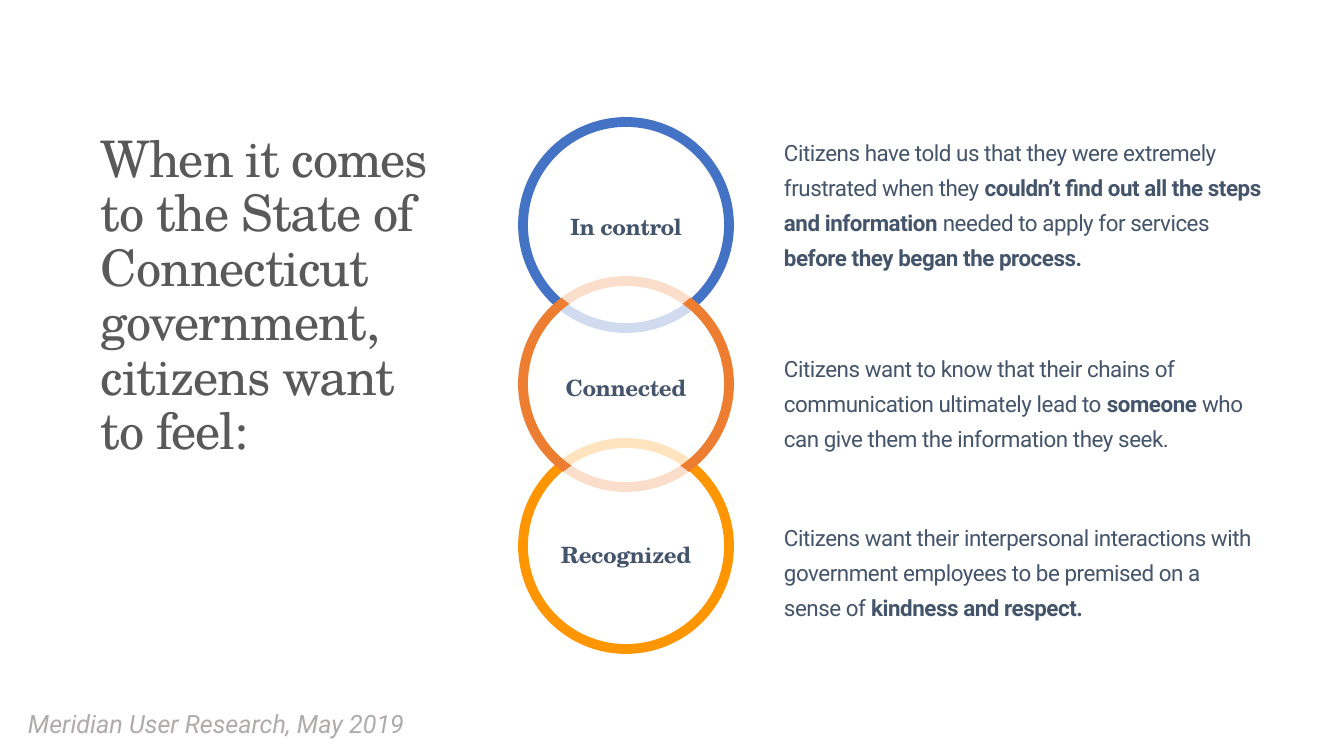
from lxml.etree import SubElement
from pptx import Presentation
from pptx.dml.color import RGBColor
from pptx.enum.shapes import MSO_SHAPE
from pptx.enum.text import MSO_ANCHOR, PP_ALIGN
from pptx.oxml.ns import qn
from pptx.util import Emu, Pt

EMU_PER_PIXEL = 914400 / 100.8
COLORS = {
    "white": "FFFFFF", "blue": "4472C4", "orange": "ED7D31", "amber": "FF9600",
    "slate": "44546A", "title": "595959", "source": "AFABAB",
}


def px(length):
    return Emu(round(length * EMU_PER_PIXEL))


def rgb(name):
    return RGBColor.from_string(COLORS[name])


def write(frame, text, *, size=16, font="Roboto", color="slate", bold=False,
          italic=False, tracking=0, align=PP_ALIGN.LEFT, leading=1.0, before=0):
    """Fill a frame's paragraph; **marks** switch bold, newlines break lines."""
    paragraph = frame.paragraphs[0]
    paragraph.alignment = align
    paragraph.line_spacing = leading
    paragraph.space_before = Pt(before)
    for part, phrase in enumerate(text.split("**")):
        for row, words in enumerate(phrase.split("\n")):
            if row:
                paragraph.add_line_break()
            if not words:
                continue
            run = paragraph.add_run()
            run.text = words
            run.font.size = Pt(size)
            run.font.name = font
            run.font.color.rgb = rgb(color)
            run.font.bold = bold or part % 2 == 1
            run.font.italic = italic
            if tracking:
                run.font._element.set("spc", str(round(tracking * 100)))


class SlideBuilder:
    serif = "TeX Gyre Schola"
    ring_width = 7
    veil_opacity = 75

    def __init__(self, slide):
        self.slide = slide

    def circle(self, left, top, size):
        shape = self.slide.shapes.add_shape(
            MSO_SHAPE.OVAL, px(left), px(top), px(size), px(size))
        shape.shadow.inherit = False
        return shape

    def ring(self, left, top, size, color):
        shape = self.circle(left, top, size)
        shape.fill.background()
        shape.line.color.rgb = rgb(color)
        shape.line.width = Pt(self.ring_width)

    def veil(self, left, top, size):
        """A translucent white disc that fades the rings beneath it."""
        shape = self.circle(left, top, size)
        shape.line.fill.background()
        shape.fill.solid()
        shape.fill.fore_color.rgb = rgb("white")
        tint = shape._element.spPr.find(qn("a:solidFill"))[0]
        SubElement(tint, qn("a:alpha"), val=str(self.veil_opacity * 1000))

    def text(self, left, top, width, height, words, insets=(0, 0), **style):
        box = self.slide.shapes.add_textbox(px(left), px(top), px(width), px(height))
        frame = box.text_frame
        frame.word_wrap = True
        frame.vertical_anchor = MSO_ANCHOR.TOP
        frame.margin_left = frame.margin_right = px(insets[0])
        frame.margin_top = frame.margin_bottom = px(insets[1])
        write(frame, words, **style)

    def label(self, center, top, width, words):
        self.text(center - width / 2, top, width, 46, words, font=self.serif,
                  bold=True, tracking=-0.3, align=PP_ALIGN.CENTER)

    def finding(self, top, width, words):
        self.text(784, top, width, 72, words, tracking=-0.3, leading=1.3, before=5)


presentation = Presentation()
presentation.slide_width = px(1344)
presentation.slide_height = px(756)
page = SlideBuilder(presentation.slides.add_slide(presentation.slide_layouts[6]))

# Headline
page.text(101, 129, 370, 220,
          "When it comes to the State of Connecticut government,\n"
          "citizens want \nto feel:",
          insets=(0, 5), size=36, font=page.serif, color="title",
          tracking=-0.8, leading=0.9)

# Interlocking rings: each veil fades the neighbours that cross it
RING_LEFT, RING_SIZE, VEIL_INSET = 523, 206, 6
VEIL_SIZE = RING_SIZE - 2 * VEIL_INSET
CENTER = RING_LEFT + RING_SIZE / 2
CONTROL_TOP, CONNECTED_TOP, RECOGNIZED_TOP = 122, 281, 443

page.ring(RING_LEFT, CONTROL_TOP, RING_SIZE, "blue")
page.ring(RING_LEFT, RECOGNIZED_TOP, RING_SIZE, "amber")
page.veil(RING_LEFT, CONNECTED_TOP, RING_SIZE)
page.ring(RING_LEFT, CONNECTED_TOP, RING_SIZE, "orange")
for outer_top in (CONTROL_TOP, RECOGNIZED_TOP):
    page.veil(RING_LEFT + VEIL_INSET, outer_top + VEIL_INSET, VEIL_SIZE)

# Feelings and the findings behind them
FEELINGS = [
    ("In control", 213, 125, 131, 489,
     "Citizens have told us that they were extremely frustrated when they"
     "** couldn’t find out all the steps and information **"
     "needed to apply for services **before they began the process.**"),
    ("Connected", 374, 125, 347, 471,
     "Citizens want to know that their chains of communication ultimately "
     "lead to **someone **who can give them the information they seek."),
    ("Recognized", 541, 159, 516, 471,
     "Citizens want their interpersonal interactions with government employees "
     "to be premised on a sense of **kindness and respect.**"),
]
for feeling, label_top, label_width, finding_top, finding_width, finding in FEELINGS:
    page.label(CENTER, label_top, label_width, feeling)
    page.finding(finding_top, finding_width, finding)

# Source line
page.text(18, 703, 414, 40, "Meridian User Research, May 2019",
          insets=(10, 5), size=18, color="source", italic=True)

presentation.save("out.pptx")
